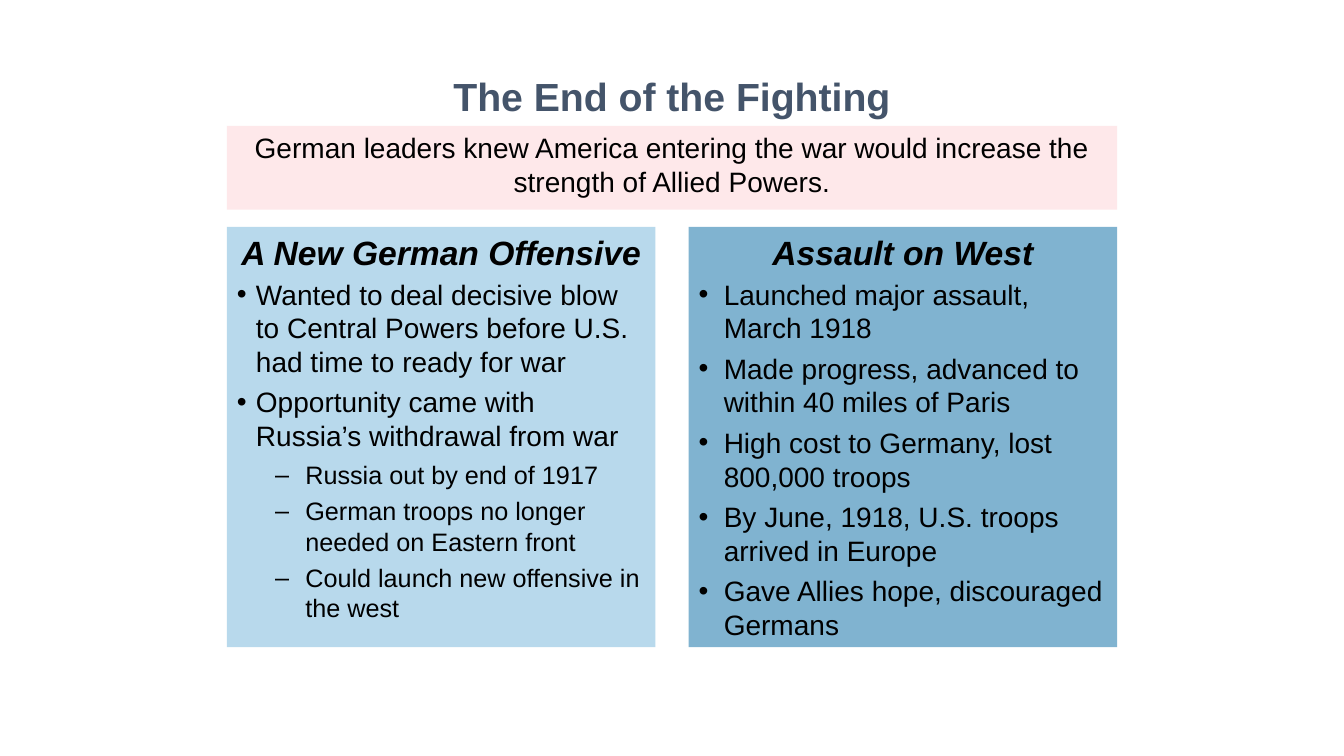
from lxml.etree import SubElement as Sub
from pptx import Presentation
from pptx.dml.color import RGBColor
from pptx.enum.shapes import MSO_SHAPE as Shape
from pptx.enum.text import MSO_ANCHOR as Anchor, PP_ALIGN as Align
from pptx.oxml.ns import qn
from pptx.util import Inches, Pt

BLACK = RGBColor(0x00, 0x00, 0x00)
SLATE = RGBColor(0x44, 0x54, 0x6A)
PINK = RGBColor(0xFE, 0xE8, 0xEA)
PALE = RGBColor(0xB8, 0xD9, 0xEC)
BLUE = RGBColor(0x80, 0xB3, 0xD0)

LEFT, RIGHT, TOP = 2.25, 6.83, 2.25
WIDE, HEAD, BODY = 4.25, 0.45, 3.72

TITLE = {"size": Pt(28), "bold": True}
HEADER = {"size": Pt(24), "bold": True, "italic": True}
PLAIN = {"size": Pt(20)}
SMALL = {"size": Pt(18)}

OFFENSIVE = [
    (0, "Wanted to deal decisive blow to Central Powers before U.S. had time to ready for war"),
    (0, "Opportunity came with Russia’s withdrawal from war"),
    (1, "Russia out by end of 1917"),
    (1, "German troops no longer needed on Eastern front"),
    (1, "Could launch new offensive in the west"),
]
ASSAULT = [
    (0, "Launched major assault, March 1918"),
    (0, "Made progress, advanced to within 40 miles of Paris"),
    (0, "High cost to Germany, lost 800,000 troops"),
    (0, "By June, 1918, U.S. troops arrived in Europe"),
    (0, "Gave Allies hope, discouraged Germans"),
]


def add_box(shapes, fill, *area):
    box = shapes.add_shape(Shape.RECTANGLE, *map(Inches, area))
    box.shadow.inherit = False
    box.fill.solid()
    box.fill.fore_color.rgb = fill
    box.line.fill.background()
    return box


def set_frame(shape):
    frame = shape.text_frame
    frame.word_wrap = True
    frame.vertical_anchor = Anchor.TOP
    return frame


def write(para, text, form, color=BLACK, align=Align.CENTER, after=0):
    para.alignment = align
    para.space_after = Pt(form["size"].pt * after)
    run = para.add_run()
    run.text = text
    run.font.name = "Arial"
    run.font.color.rgb = color
    for key, value in form.items():
        setattr(run.font, key, value)


def add_bullet(para, mark, left, hang):
    props = para._p.get_or_add_pPr()
    props.set("marL", str(Inches(left)))
    props.set("indent", str(-Inches(hang)))
    Sub(props, qn("a:buFont"), typeface="Arial")
    Sub(props, qn("a:buChar"), char=mark)


def add_list(frame, items, inset):
    styles = [(PLAIN, "•", inset, inset), (SMALL, "–", 0.68, 0.3)]
    for i, (level, text) in enumerate(items):
        para = frame.add_paragraph() if i else frame.paragraphs[0]
        para.level = level
        form, mark, left, hang = styles[level]
        write(para, text, form, align=Align.LEFT, after=0.25)
        add_bullet(para, mark, left, hang)


def add_panel(slide, left, fill, header, items, inset):
    shapes = slide.shapes.add_group_shape().shapes
    body = add_box(shapes, fill, left, TOP + HEAD, WIDE, BODY)
    add_list(set_frame(body), items, inset)
    head = add_box(shapes, fill, left, TOP, WIDE, HEAD)
    write(set_frame(head).paragraphs[0], header, HEADER, after=0.25)


def add_intro(slide, text):
    box = add_box(slide.shapes, PINK, LEFT, 1.25, RIGHT + WIDE - LEFT, 0.83)
    write(set_frame(box).paragraphs[0], text, PLAIN, after=0.5)


def add_title(slide, text):
    area = map(Inches, (2.33, 0.67, 8.67, 0.58))
    frame = set_frame(slide.shapes.add_textbox(*area))
    write(frame.paragraphs[0], text, TITLE, SLATE)


def main():
    deck = Presentation()
    deck.slide_width, deck.slide_height = Inches(13.33), Inches(7.5)
    slide = deck.slides.add_slide(deck.slide_layouts[6])
    add_intro(slide, "German leaders knew America entering the war would "
                     "increase the strength of Allied Powers.")
    add_panel(slide, LEFT, PALE, "A New German Offensive", OFFENSIVE, 0.19)
    add_panel(slide, RIGHT, BLUE, "Assault on West", ASSAULT, 0.25)
    add_title(slide, "The End of the Fighting")
    deck.save("out.pptx")


if __name__ == "__main__":
    main()
